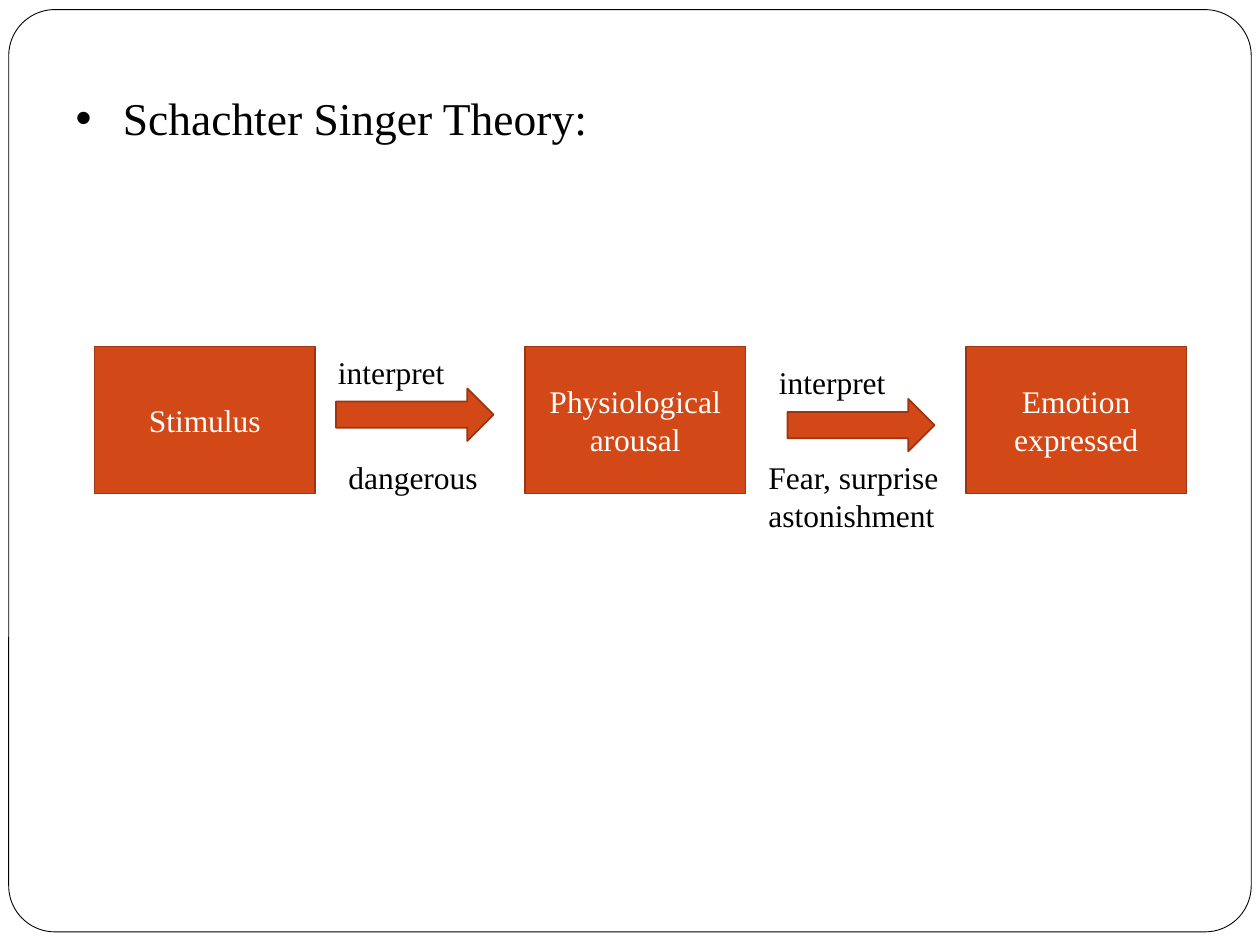
from dataclasses import dataclass

from lxml.etree import SubElement
from pptx import Presentation
from pptx.dml.color import RGBColor
from pptx.enum.shapes import MSO_SHAPE
from pptx.enum.text import MSO_ANCHOR, MSO_AUTO_SIZE, PP_ALIGN
from pptx.oxml.ns import qn
from pptx.shapes.autoshape import Shape
from pptx.slide import Slide
from pptx.text.text import TextFrame
from pptx.util import Pt

ORANGE = RGBColor(0xD3, 0x48, 0x17)
RUST = RGBColor(0x9C, 0x35, 0x11)
BLACK = RGBColor(0, 0, 0)
WHITE = RGBColor(255, 255, 255)
FONT = "Times New Roman"


@dataclass(frozen=True)
class Box:
    left: float
    top: float
    width: float
    height: float

    def lengths(self) -> tuple[Pt, Pt, Pt, Pt]:
        return Pt(self.left), Pt(self.top), Pt(self.width), Pt(self.height)


@dataclass(frozen=True)
class Label:
    wording: str
    box: Box


STAGES = [
    Label("Stimulus", Box(54, 198, 126, 84)),
    Label("Physiological\narousal", Box(300, 198, 126, 84)),
    Label("Emotion\nexpressed", Box(552, 198, 126, 84)),
]
ARROWS = [Box(192, 222, 90, 30), Box(450, 228, 84, 30)]
CAPTIONS = [
    Label("interpret", Box(186, 198, 80.6, 29)),
    Label("interpret", Box(438, 204, 80.6, 29)),
    Label("dangerous", Box(192, 258, 94.3, 29)),
    Label("Fear, surprise\nastonishment", Box(432, 258, 117.4, 51)),
]


def write(frame: TextFrame, wording: str, size: float, color: RGBColor,
          align: PP_ALIGN = PP_ALIGN.LEFT) -> None:
    frame.text = wording
    for paragraph in frame.paragraphs:
        paragraph.alignment = align
        paragraph.font.name = FONT
        paragraph.font.size = Pt(size)
        paragraph.font.color.rgb = color


def add_block(slide: Slide, kind: MSO_SHAPE, box: Box, fill: RGBColor = ORANGE,
              line: RGBColor = RUST, weight: float = 1) -> Shape:
    block = slide.shapes.add_shape(kind, *box.lengths())
    block.shadow.inherit = False
    block.fill.solid()
    block.fill.fore_color.rgb = fill
    block.line.color.rgb = line
    block.line.width = Pt(weight)
    return block


def add_stage(slide: Slide, stage: Label) -> None:
    block = add_block(slide, MSO_SHAPE.RECTANGLE, stage.box)
    block.text_frame.vertical_anchor = MSO_ANCHOR.MIDDLE
    write(block.text_frame, stage.wording, 18, WHITE, PP_ALIGN.CENTER)


def add_caption(slide: Slide, caption: Label) -> None:
    frame = slide.shapes.add_textbox(*caption.box.lengths()).text_frame
    frame.word_wrap = False
    frame.auto_size = MSO_AUTO_SIZE.SHAPE_TO_FIT_TEXT
    write(frame, caption.wording, 18, BLACK)


def fill_body(body: Shape, wording: str) -> None:
    body.left, body.top, body.width, body.height = Box(36, 48, 648, 450).lengths()
    frame = body.text_frame
    frame.vertical_anchor = MSO_ANCHOR.TOP
    paragraph = frame.paragraphs[0]
    paragraph.space_before = Pt(5.8)
    properties = paragraph._p.get_or_add_pPr()
    properties.set("marL", str(Pt(21.6)))
    properties.set("indent", str(Pt(-21.6)))
    bullet_color = SubElement(properties, qn("a:buClr"))
    SubElement(bullet_color, qn("a:srgbClr"), val=str(ORANGE))
    SubElement(properties, qn("a:buSzPct"), val="85000")
    SubElement(properties, qn("a:buChar"), char="●")
    write(frame, wording, 26, BLACK)


def main() -> None:
    presentation = Presentation()
    presentation.slide_width, presentation.slide_height = Pt(720), Pt(540)
    slide = presentation.slides.add_slide(presentation.slide_layouts[1])
    title, body = slide.placeholders
    title.element.getparent().remove(title.element)

    border = add_block(slide, MSO_SHAPE.ROUNDED_RECTANGLE, Box(5, 5.5, 710, 527),
                       WHITE, BLACK, 0.5)
    border.adjustments[0] = 0.05
    body.element.addprevious(border.element)
    fill_body(body, "Schachter Singer Theory:")

    for stage in STAGES:
        add_stage(slide, stage)
    for arrow in ARROWS:
        add_block(slide, MSO_SHAPE.RIGHT_ARROW, arrow)
    for caption in CAPTIONS:
        add_caption(slide, caption)
    presentation.save("out.pptx")


if __name__ == "__main__":
    main()
